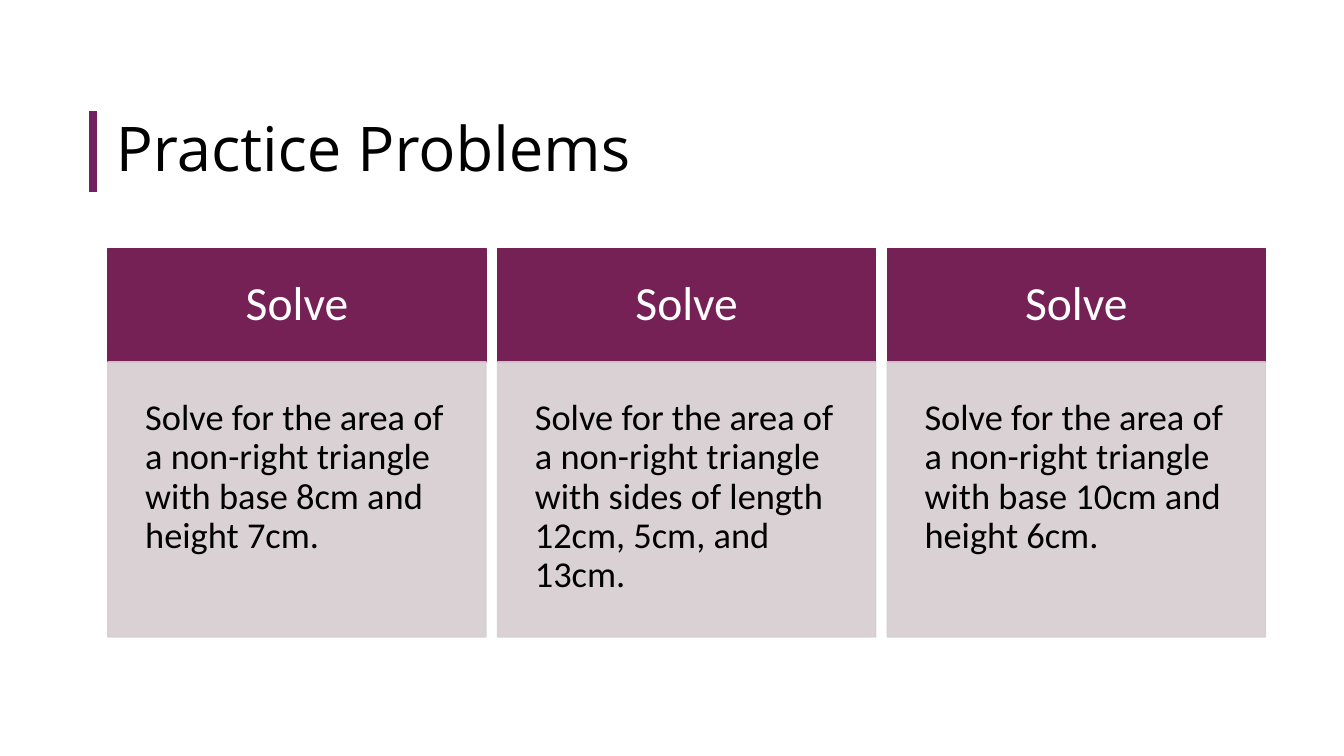
from lxml.etree import SubElement
from pptx import Presentation
from pptx.dml.color import RGBColor
from pptx.enum.shapes import MSO_CONNECTOR, MSO_SHAPE
from pptx.enum.text import MSO_ANCHOR as Anchor, PP_ALIGN as Align
from pptx.oxml.ns import qn
from pptx.util import Cm, Pt

PLUM = "752156"
ACCENT = "722262"
MAUVE = "D6CDD1"
BLACK = "000000"
WHITE = "FFFFFF"

PROBLEMS = [
    "Solve for the area of a non-right triangle with base 8cm and height 7cm.",
    "Solve for the area of a non-right triangle with sides of length 12cm, 5cm, and 13cm.",
    "Solve for the area of a non-right triangle with base 10cm and height 6cm.",
]

CARD_LEFT, CARD_STEP, CARD_WIDTH = 2.72, 9.82, 9.53
HEADER_TOP, HEADER_HEIGHT, BODY_HEIGHT = 6.27, 2.85, 6.93

TITLE_FORMAT = {"name": "Open Sans", "size": Pt(44)}
HEADER_FORMAT = {"name": "Calibri", "size": Pt(34)}
BODY_FORMAT = {"name": "Calibri", "size": Pt(26)}


def set_attributes(target, values):
    for name, value in values.items():
        setattr(target, name, value)


def set_color(color_format, color, opacity=100):
    """Apply a hex colour, with its opacity in percent."""
    color_format.fore_color.rgb = RGBColor.from_string(color)
    if opacity < 100:
        for element in color_format._xPr.iter(qn("a:srgbClr")):
            SubElement(element, qn("a:alpha"), val=str(opacity * 1000))


def set_text(shape, text, font_format, color, align, anchor, insets):
    """Fill a shape with one paragraph; insets are horizontal and vertical, in cm."""
    horizontal, vertical = map(Cm, insets)
    set_attributes(shape.text_frame, {
        "word_wrap": True,
        "vertical_anchor": anchor,
        "margin_left": horizontal,
        "margin_right": horizontal,
        "margin_top": vertical,
        "margin_bottom": vertical,
    })
    paragraph = shape.text_frame.paragraphs[0]
    set_attributes(paragraph, {"alignment": align, "line_spacing": 0.9})
    run = paragraph.add_run()
    run.text = text
    set_attributes(run.font, font_format)
    run.font.color.rgb = RGBColor.from_string(color)


def add_title(slide, text):
    box = slide.shapes.add_textbox(Cm(2.67), Cm(2.8), Cm(29.21), Cm(2.03))
    set_text(box, text, TITLE_FORMAT, BLACK, Align.LEFT, Anchor.MIDDLE, (0.25, 0.13))


def add_accent_line(slide):
    line = slide.shapes.add_connector(
        MSO_CONNECTOR.STRAIGHT, Cm(2.34), Cm(2.8), Cm(2.34), Cm(4.83))
    line.line.width = Pt(6)
    line.line.color.rgb = RGBColor.from_string(ACCENT)
    SubElement(line._element.spPr, qn("a:effectLst"))


def add_panel(slide, left, top, height, color, opacity=100):
    panel = slide.shapes.add_shape(
        MSO_SHAPE.RECTANGLE, Cm(left), Cm(top), Cm(CARD_WIDTH), Cm(height))
    panel.shadow.inherit = False
    panel.line.width = Pt(1)
    for color_format in (panel.fill, panel.line.fill):
        color_format.solid()
        set_color(color_format, color, opacity)
    return panel


def add_card(slide, left, heading, problem):
    header = add_panel(slide, left, HEADER_TOP, HEADER_HEIGHT, PLUM)
    set_text(header, heading, HEADER_FORMAT, WHITE, Align.CENTER, Anchor.MIDDLE, (0.76, 0.76))
    body = add_panel(slide, left, HEADER_TOP + HEADER_HEIGHT, BODY_HEIGHT, MAUVE, opacity=90)
    set_text(body, problem, BODY_FORMAT, BLACK, Align.LEFT, Anchor.TOP, (0.94, 0.94))


def main():
    presentation = Presentation()
    set_attributes(presentation, {"slide_width": Cm(33.87), "slide_height": Cm(19.05)})
    slide = presentation.slides.add_slide(presentation.slide_layouts[6])
    add_accent_line(slide)
    add_title(slide, "Practice Problems")
    for column, problem in enumerate(PROBLEMS):
        add_card(slide, CARD_LEFT + column * CARD_STEP, "Solve", problem)
    presentation.save("out.pptx")


if __name__ == "__main__":
    main()
